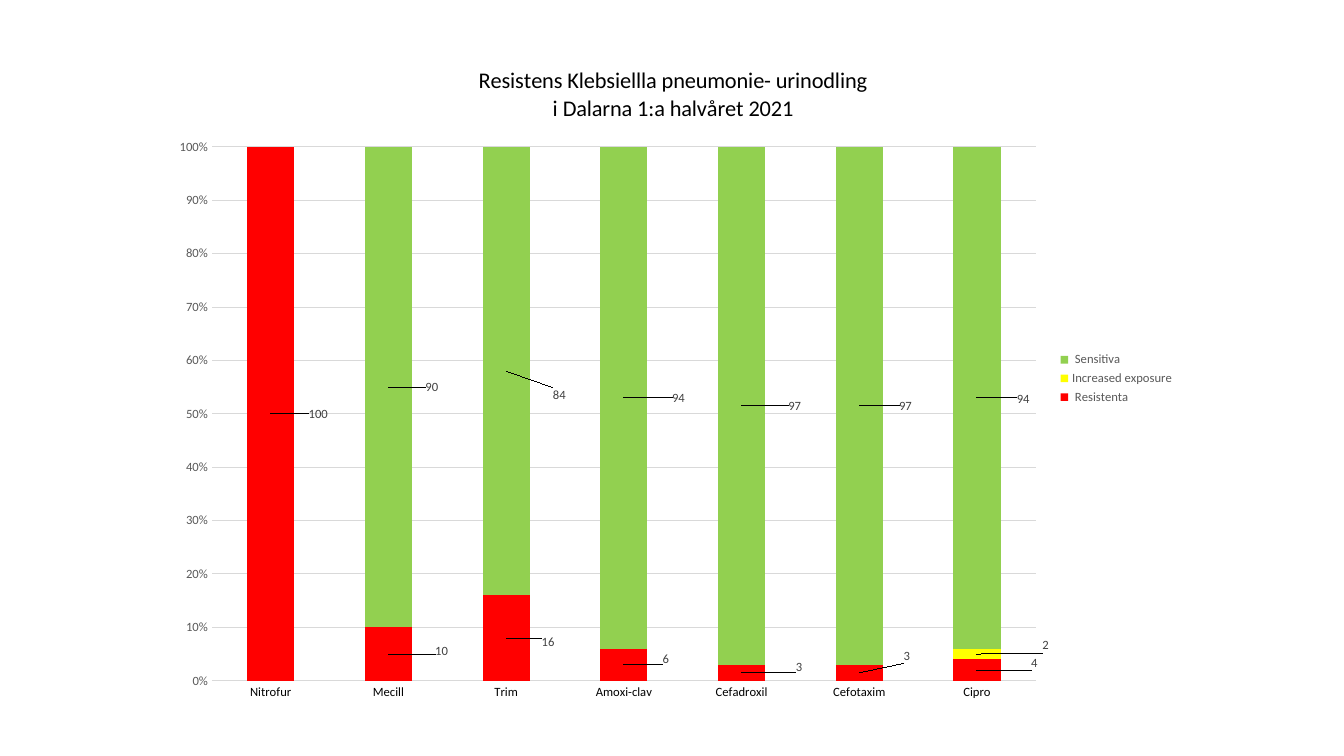
from dataclasses import dataclass

from lxml import etree
from pptx import Presentation
from pptx.chart.chart import Chart
from pptx.chart.data import CategoryChartData
from pptx.dml.color import RGBColor
from pptx.enum.chart import XL_CHART_TYPE, XL_LEGEND_POSITION, XL_TICK_MARK
from pptx.oxml.ns import qn
from pptx.text.text import Font
from pptx.util import Pt

STACKED = XL_CHART_TYPE.COLUMN_STACKED_100
RIGHT = XL_LEGEND_POSITION.RIGHT
NO_TICK = XL_TICK_MARK.NONE

CHART_WIDTH, CHART_HEIGHT = 732.24, 478.8
BLACK, GREY, DARK_GREY, PALE_GREY = "000000", "595959", "404040", "D9D9D9"
TITLE = "Resistens Klebsiellla pneumonie- urinodling\ni Dalarna 1:a halvåret 2021"
ANTIBIOTICS = ["Nitrofur", "Mecill", "Trim", "Amoxi-clav", "Cefadroxil", "Cefotaxim", "Cipro"]


@dataclass
class Outcome:
    name: str
    shares: list[int]
    color: str
    label_shifts: dict[int, tuple[float, float]]


OUTCOMES = [
    Outcome(" Resistenta", [100, 10, 16, 6, 3, 3, 4], "FF0000",
            {0: (34, 0), 1: (38, -2), 2: (30, 3), 3: (30, -4),
             4: (41, -4), 5: (34, -12), 6: (41, -5)}),
    Outcome("Increased exposure", [0, 0, 0, 0, 0, 0, 2], "FFFF00", {6: (49, -6)}),
    Outcome(" Sensitiva", [0, 90, 84, 94, 97, 97, 94], "92D050",
            {1: (31, 0), 2: (38, 17), 3: (39, 0), 4: (38, 0), 5: (33, 0), 6: (33, 1)}),
]


def rgb(color: str) -> RGBColor:
    return RGBColor.from_string(color)


def set_all(target: object, values: dict[str, object]) -> None:
    for attribute, value in values.items():
        setattr(target, attribute, value)


def style_font(font: Font, size: float, color: str) -> None:
    set_all(font, {"name": "Calibri", "size": Pt(size), "bold": False})
    font.color.rgb = rgb(color)


def place(parent: etree.ElementBase, index: int, values: dict[str, str | float]) -> None:
    for old in parent.findall(qn("c:layout")):
        parent.remove(old)
    layout = etree.Element(qn("c:layout"))
    manual = etree.SubElement(layout, qn("c:manualLayout"))
    extents = {"x": CHART_WIDTH, "y": CHART_HEIGHT, "w": CHART_WIDTH, "h": CHART_HEIGHT}
    for tag, value in values.items():
        share = value / extents[tag] if tag in extents else value
        etree.SubElement(manual, qn(f"c:{tag}")).set("val", str(share))
    parent.insert(index, layout)


def style_title(chart: Chart) -> None:
    chart.has_title = True
    frame = chart.chart_title.text_frame
    frame.text = TITLE
    for paragraph in frame.paragraphs:
        style_font(paragraph.runs[0].font, 16, BLACK)
    place(chart.chart_title.element, 1,
          {"xMode": "edge", "yMode": "edge", "x": 226, "y": 14})


def style_axes(chart: Chart) -> None:
    for axis, color in ((chart.category_axis, BLACK), (chart.value_axis, GREY)):
        set_all(axis, {"major_tick_mark": NO_TICK, "minor_tick_mark": NO_TICK})
        style_font(axis.tick_labels.font, 9, color)
    percent = chart.value_axis
    set_all(percent, {"minimum_scale": 0, "maximum_scale": 1, "major_unit": 0.1,
                      "has_major_gridlines": True})
    set_all(percent.tick_labels, {"number_format": "0%", "number_format_is_linked": False})
    percent.format.line.fill.background()
    for line in (chart.category_axis.format.line, percent.major_gridlines.format.line):
        line.width = Pt(0.75)
        line.color.rgb = rgb(PALE_GREY)


def style_outcomes(chart: Chart) -> None:
    bars = chart.plots[0]
    set_all(bars, {"gap_width": 150, "overlap": 100, "vary_by_categories": False})
    for series, outcome, node in zip(bars.series, OUTCOMES, chart.element.xpath(".//c:ser")):
        series.format.fill.solid()
        series.format.fill.fore_color.rgb = rgb(outcome.color)
        series.data_labels.show_value = False
        for point in outcome.label_shifts:
            style_font(series.points[point].data_label.font, 9, DARK_GREY)
        for label, (x, y) in zip(node.xpath(".//c:dLbl"), outcome.label_shifts.values()):
            place(label, 1, {"x": x, "y": y})


def main() -> None:
    deck = Presentation()
    set_all(deck, {"slide_width": Pt(960), "slide_height": Pt(540)})
    slide = deck.slides.add_slide(deck.slide_layouts[6])
    resistance = CategoryChartData()
    resistance.categories = ANTIBIOTICS
    for outcome in OUTCOMES:
        resistance.add_series(outcome.name, outcome.shares)
    chart = slide.shapes.add_chart(STACKED, Pt(113.76), Pt(30.96), Pt(CHART_WIDTH),
                                   Pt(CHART_HEIGHT), resistance).chart
    style_font(chart.font, 10, BLACK)
    style_title(chart)
    style_axes(chart)
    style_outcomes(chart)
    chart.has_legend = True
    set_all(chart.legend, {"position": RIGHT, "include_in_layout": False})
    style_font(chart.legend.font, 9, GREY)
    place(chart.element.xpath(".//c:plotArea")[0], 0,
          {"layoutTarget": "inner", "xMode": "edge", "yMode": "edge",
           "x": 37.6, "y": 74, "w": 588.6, "h": 381.4})
    deck.save("out.pptx")


if __name__ == "__main__":
    main()
